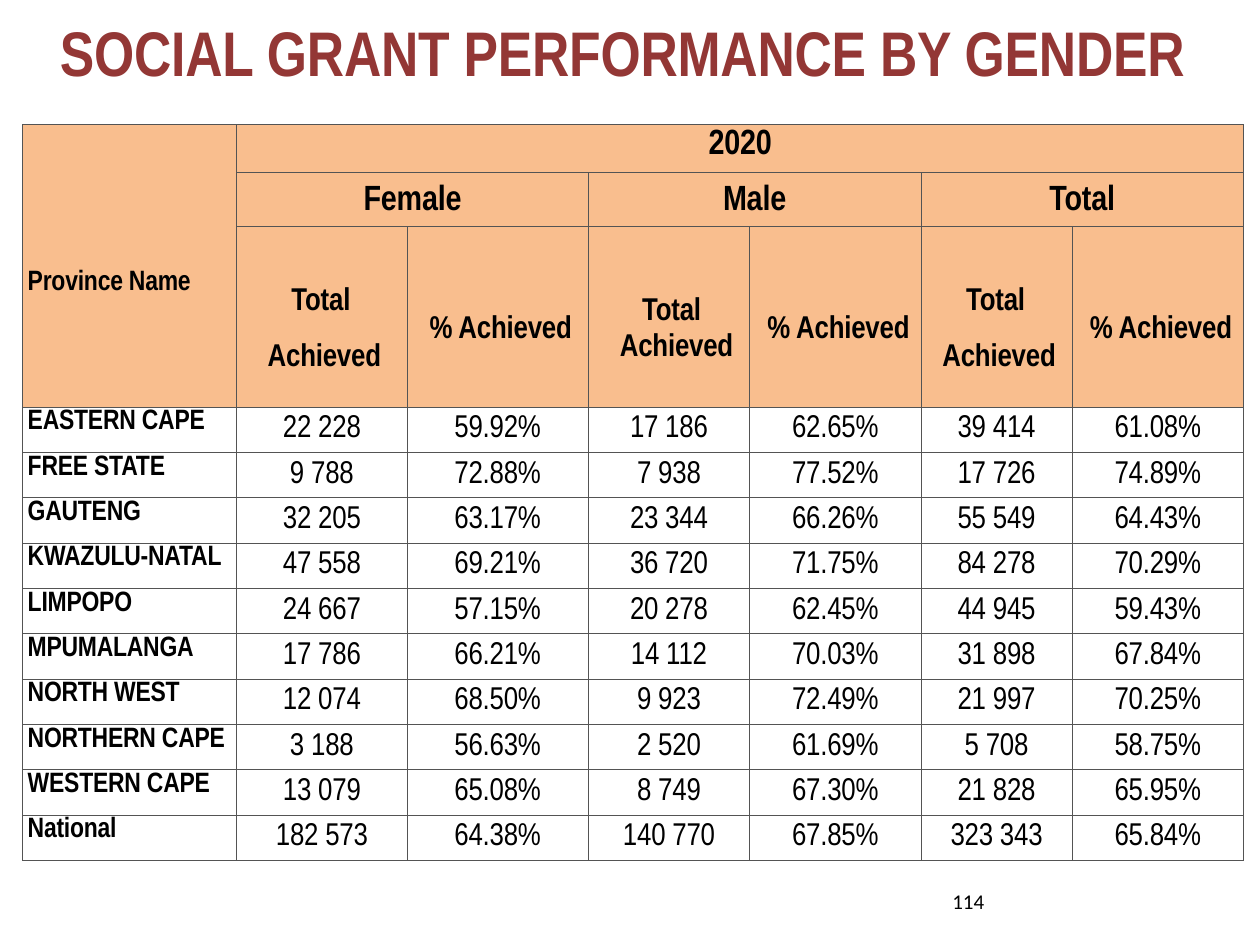
"""Build the slide on social grant performance by gender."""
from lxml.etree import SubElement as Sub
from pptx import Presentation
from pptx.dml.color import RGBColor as RGB
from pptx.enum.text import MSO_ANCHOR as Anchor, PP_ALIGN as Align
from pptx.oxml.ns import qn
from pptx.util import Inches as In, Pt

RED = RGB(0x93, 0x37, 0x35)
PEACH = RGB(0xF9, 0xBE, 0x8E)
BLACK = RGB(0, 0, 0)
GREY = RGB(0x54, 0x54, 0x54)
NARROW = "Arial Narrow"

TITLE = "SOCIAL GRANT PERFORMANCE BY GENDER"
PAGE = "114"
YEAR = "2020"
GROUPS = ["Female", "Male", "Total"]
TOTALS = [["Total ", "Achieved"], ["Total Achieved"], ["Total ", "Achieved"]]
SHARE = "% Achieved"
DATA = [
    ("EASTERN CAPE", "22 228", "59.92%", "17 186", "62.65%", "39 414", "61.08%"),
    ("FREE STATE", "9 788", "72.88%", "7 938", "77.52%", "17 726", "74.89%"),
    ("GAUTENG", "32 205", "63.17%", "23 344", "66.26%", "55 549", "64.43%"),
    ("KWAZULU-NATAL", "47 558", "69.21%", "36 720", "71.75%", "84 278", "70.29%"),
    ("LIMPOPO", "24 667", "57.15%", "20 278", "62.45%", "44 945", "59.43%"),
    ("MPUMALANGA", "17 786", "66.21%", "14 112", "70.03%", "31 898", "67.84%"),
    ("NORTH WEST", "12 074", "68.50%", "9 923", "72.49%", "21 997", "70.25%"),
    ("NORTHERN CAPE", "3 188", "56.63%", "2 520", "61.69%", "5 708", "58.75%"),
    ("WESTERN CAPE", "13 079", "65.08%", "8 749", "67.30%", "21 828", "65.95%"),
    ("National", "182 573", "64.38%", "140 770", "67.85%", "323 343", "65.84%"),
]
COLS = [1.7, 1.35, 1.44, 1.28, 1.36, 1.2, 1.36]
HEADS = [0.38, 0.43, 1.43]
ROWS = HEADS + [0.36] * len(DATA)

NAME = dict(size=16, align=Align.LEFT, left=0.04)
GROUP = dict(size=20, line=21)
TOTAL = dict(line=20.6, left=0.12, hang=-0.08, gap=11.3)
RATE = dict(line=20.6, left=0.27, hang=-0.22)


def write(frame, lines, size=18, bold=True, color=BLACK, face=NARROW,
          align=Align.CENTER, line=None, left=0, hang=0, gap=0, tight=-10):
    frame.word_wrap = True
    for i, text in enumerate(lines):
        para = frame.paragraphs[0] if i == 0 else frame.add_paragraph()
        para.alignment = align
        if line:
            para.line_spacing = Pt(line)
        if i:
            para.space_before = Pt(gap)
        props = para._p.get_or_add_pPr()
        props.set("marL", str(In(left)))
        props.set("indent", str(In(hang)))
        run = para.add_run()
        run.text = text
        for key, value in dict(size=Pt(size), bold=bold, name=face).items():
            setattr(run.font, key, value)
        run.font.color.rgb = color
        run._r.get_or_add_rPr().set("spc", str(tight))


def border(cell):
    props = cell._tc.get_or_add_tcPr()
    for side in "LRTB":
        edge = Sub(props, qn(f"a:ln{side}"), w=str(Pt(0.5)))
        Sub(Sub(edge, qn("a:solidFill")), qn("a:srgbClr"), val=str(GREY))


def put(cell, lines, top=0, anchor=Anchor.MIDDLE, **form):
    pads = dict(margin_left=0, margin_right=0, margin_bottom=0,
                margin_top=In(top), vertical_anchor=anchor)
    for key, value in pads.items():
        setattr(cell, key, value)
    write(cell.text_frame, lines, **form)


def label(slide, box, text, pads, **form):
    frame = slide.shapes.add_textbox(*map(In, box)).text_frame
    frame.vertical_anchor = Anchor.MIDDLE
    for side, pad in pads.items():
        setattr(frame, f"margin_{side}", In(pad))
    write(frame, [text], **form)


def grid(slide):
    area = map(In, (0.18, 0.99, sum(COLS), sum(ROWS)))
    table = slide.shapes.add_table(len(ROWS), len(COLS), *area).table
    table.first_row = table.horz_banding = False
    for col, width in zip(table.columns, COLS):
        col.width = In(width)
    for i, height in enumerate(ROWS):
        table.rows[i].height = In(height)
        for cell in table.rows[i].cells:
            border(cell)
            if i < len(HEADS):
                cell.fill.solid()
                cell.fill.fore_color.rgb = PEACH
            else:
                cell.fill.background()
    at = table.cell
    at(0, 0).merge(at(2, 0))
    at(0, 1).merge(at(0, 6))
    put(at(0, 0), ["Province Name"], top=0.2, line=21, **NAME)
    put(at(0, 1), [YEAR], anchor=Anchor.TOP, **GROUP)
    for i, (group, total) in enumerate(zip(GROUPS, TOTALS)):
        col = 1 + 2 * i
        at(1, col).merge(at(1, col + 1))
        put(at(1, col), [group], **GROUP)
        put(at(2, col), total, top=0.16, **TOTAL)
        put(at(2, col + 1), [SHARE], top=0.16, **RATE)
    for i, (name, *values) in enumerate(DATA, len(HEADS)):
        put(at(i, 0), [name], top=0.02, anchor=Anchor.TOP, **NAME)
        for j, value in enumerate(values, 1):
            put(at(i, j), [value], bold=False)


def main():
    deck = Presentation()
    deck.slide_width, deck.slide_height = In(10), In(7.5)
    slide = deck.slides.add_slide(deck.slide_layouts[6])
    flush = dict.fromkeys(("left", "top", "right", "bottom"), 0)
    label(slide, (0, 0.1, 9.88, 0.62), TITLE, flush, size=36, color=RED)
    grid(slide)
    label(slide, (7.36, 6.9, 0.55, 0.51), PAGE, {}, size=12, bold=False,
          face="Calibri", align=Align.RIGHT, tight=0)
    deck.save("out.pptx")


if __name__ == "__main__":
    main()
